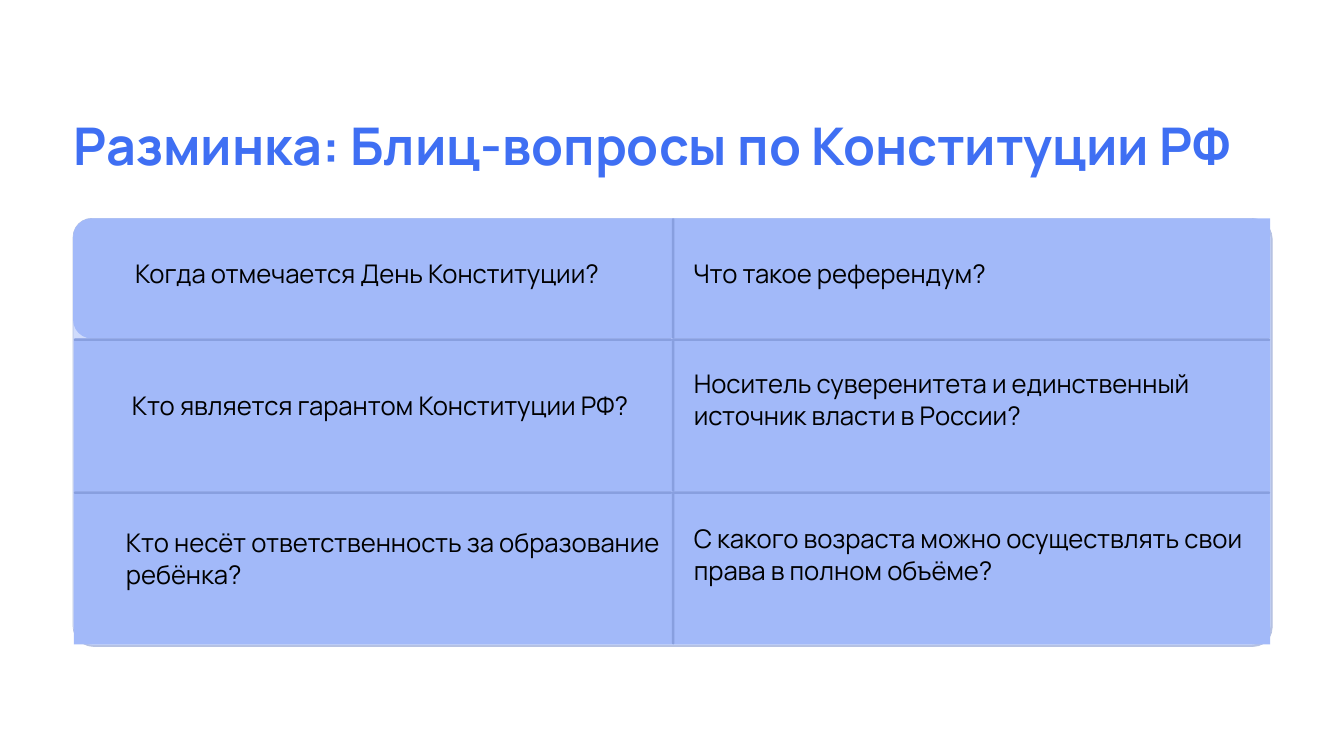
"""Build the warm-up slide with quick questions on the Constitution."""
from lxml.etree import SubElement
from pptx import Presentation
from pptx.dml.color import RGBColor
from pptx.enum.shapes import MSO_SHAPE as SHAPE
from pptx.enum.text import MSO_ANCHOR, MSO_AUTO_SIZE, PP_ALIGN
from pptx.oxml.ns import qn
from pptx.util import Emu, Pt

PX = 9144
FONT = "Manrope"
TITLE_BLUE = RGBColor(0x3F, 0x6F, 0xF3)
PANEL_BLUE = RGBColor(0xCF, 0xDB, 0xFC)
PANEL_EDGE = RGBColor(0xB5, 0xC1, 0xE2)
CELL_BLUE = RGBColor(0xA2, 0xB9, 0xF9)
RULE_BLUE = RGBColor(0x88, 0x9F, 0xDF)
BLACK = RGBColor(0, 0, 0)

TITLE = "Разминка: Блиц-вопросы по Конституции РФ"
PANEL_LEFT, PANEL_WIDTH = 87, 1426
COLUMNS = (88, 800)
COLUMN_WIDTH = 712
RULE = 3
ROWS = ((260, 143), (403, 182), (585, 182))
QUESTIONS = (
    (("Когда отмечается День Конституции?", (161, 306, 565, 39), False),
     ("Что такое референдум?", (825, 306, 355, 39), False)),
    (("Кто является гарантом Конституции РФ?", (157, 462, 607, 39), False),
     ("Носитель суверенитета и единственный источник власти в России?",
      (826, 436, 663, 78), True)),
    (("Кто несёт ответственность за образование ребёнка?",
      (150, 626, 663, 78), True),
     ("С какого возраста можно осуществлять свои права в полном объёме?",
      (826, 621, 663, 78), True)),
)


def emu(*lengths):
    """Turn px lengths into EMU."""
    return [Emu(length * PX) for length in lengths]


def add_block(slide, kind, box, color, radius=None):
    """Add a filled shape without outline or shadow."""
    shape = slide.shapes.add_shape(kind, *emu(*box))
    shape.shadow.inherit = False
    shape.fill.solid()
    shape.fill.fore_color.rgb = color
    shape.line.fill.background()
    if radius is not None:
        shape.adjustments[0] = radius
    return shape


def add_panel(slide):
    """Add the outlined panel with its hard shadow."""
    panel = add_block(slide, SHAPE.ROUNDED_RECTANGLE,
                      (PANEL_LEFT, 260, PANEL_WIDTH, 508), PANEL_BLUE, 0.044)
    panel.line.color.rgb = PANEL_EDGE
    panel.line.width = Pt(0.6)
    effects = panel._element.spPr.find(qn("a:effectLst"))
    shadow = SubElement(effects, qn("a:outerShdw"), blurRad="0",
                        dist=str(Pt(1.6)), dir="2700000", algn="tl",
                        rotWithShape="0")
    SubElement(shadow, qn("a:srgbClr"), val=str(PANEL_EDGE))


def write_text(shape, text, size, leading, color, bold=False, wrap=False):
    """Fill a shape with one formatted paragraph."""
    frame = shape.text_frame
    frame.text = text
    frame.word_wrap = wrap
    frame.auto_size = MSO_AUTO_SIZE.NONE
    frame.vertical_anchor = MSO_ANCHOR.TOP
    frame.margin_left = frame.margin_right = 0
    frame.margin_top = frame.margin_bottom = 0
    paragraph = frame.paragraphs[0]
    paragraph.alignment = PP_ALIGN.LEFT
    paragraph.line_spacing = Pt(leading)
    paragraph.space_before = Pt(0)
    font = paragraph.runs[0].font
    font.name = FONT
    font.size = Pt(size)
    font.bold = bold
    font.color.rgb = color


def add_title(slide):
    """Place the slide title across the full panel width."""
    title = slide.shapes.title
    title.left, title.top, title.width, title.height = emu(
        PANEL_LEFT, 132, PANEL_WIDTH, 78)
    write_text(title, TITLE, 44.5, 55.5, TITLE_BLUE, bold=True)


def add_cell(slide, row, column):
    """Add one grid cell with its dividing rules and question."""
    left = COLUMNS[column]
    top, height = ROWS[row]
    if row == column == 0:
        add_block(slide, SHAPE.ROUNDED_RECTANGLE,
                  (PANEL_LEFT, top, 735, height), CELL_BLUE, 0.156)
    else:
        add_block(slide, SHAPE.RECTANGLE, (left, top, COLUMN_WIDTH, height),
                  CELL_BLUE)
    if column:
        add_block(slide, SHAPE.ROUNDED_RECTANGLE, (left, top, RULE, height),
                  RULE_BLUE, 0.5)
    if row:
        add_block(slide, SHAPE.ROUNDED_RECTANGLE,
                  (left, top, COLUMN_WIDTH, RULE), RULE_BLUE, 0.5)
    question, box, wrap = QUESTIONS[row][column]
    text_box = slide.shapes.add_textbox(*emu(*box))
    write_text(text_box, question, 22, 27.5, BLACK, wrap=wrap)


def main():
    """Build and save the presentation."""
    presentation = Presentation()
    presentation.slide_width, presentation.slide_height = emu(1600, 900)
    slide = presentation.slides.add_slide(presentation.slide_layouts[5])
    add_title(slide)
    add_panel(slide)
    for row in range(len(ROWS)):
        for column in range(len(COLUMNS)):
            add_cell(slide, row, column)
    presentation.save("out.pptx")


if __name__ == "__main__":
    main()
